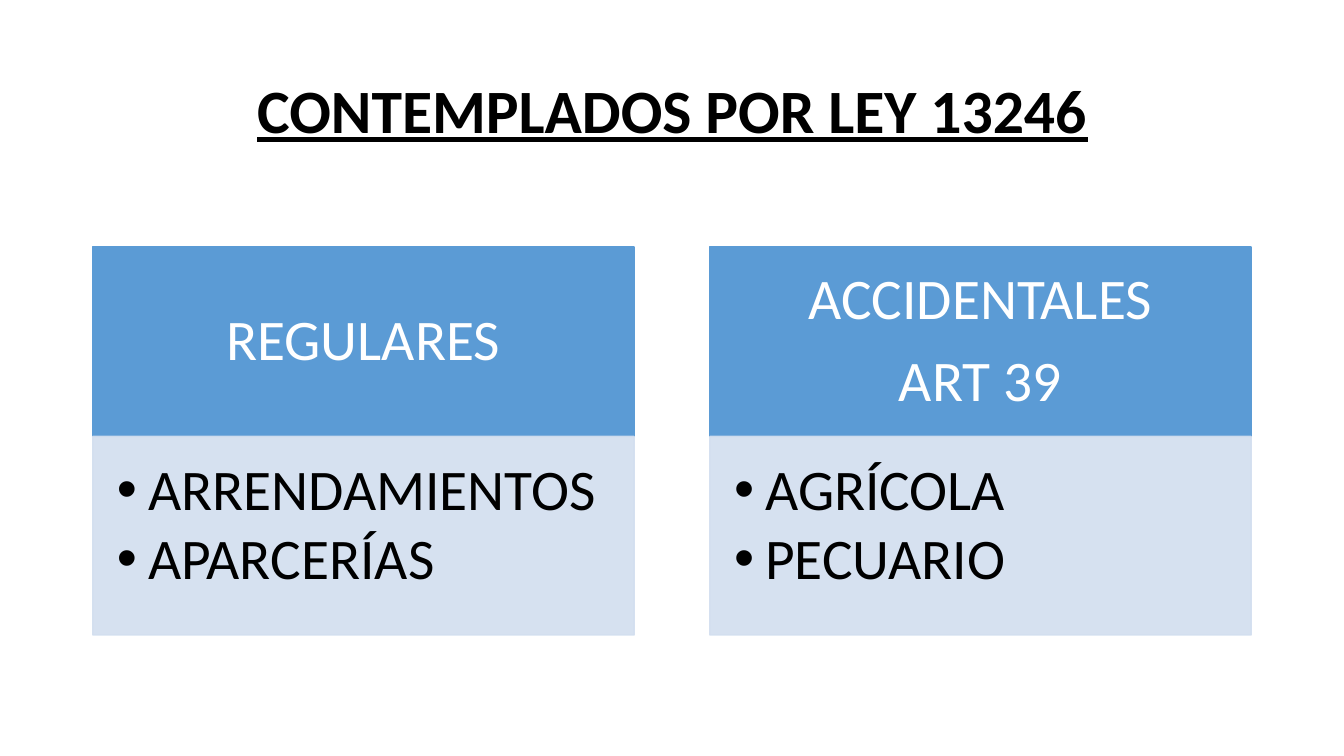
"""Builds the slide on the contracts covered by law 13246."""
import pptx
import pptx.dml.color
import pptx.enum.shapes
import pptx.enum.text
import pptx.oxml.ns
import pptx.util
from lxml import etree

PX = 9144
COLOURS = {"header": "5B9BD5", "body": "D2DEEF", "ink": "000000", "paper": "FFFFFF"}
ANCHOR = pptx.enum.text.MSO_ANCHOR
ALIGN = pptx.enum.text.PP_ALIGN


def apply(target, values):
    for attribute, value in values.items():
        setattr(target, attribute, value)


class Board:
    def __init__(self, slide, font):
        self.slide = slide
        self.font = font

    def colour(self, name):
        return pptx.dml.color.RGBColor.from_string(COLOURS[name])

    def element(self, parent, tag, **attributes):
        return etree.SubElement(parent, pptx.oxml.ns.qn(tag), attributes)

    def fill_text(self, frame, lines, ink, insets, anchor, font, paragraph_format, bullet=0):
        sides = ("margin_left", "margin_top", "margin_right", "margin_bottom")
        apply(frame, dict(zip(sides, (inset * PX for inset in insets))))
        apply(frame, {"word_wrap": True, "vertical_anchor": anchor})
        for index, line in enumerate(lines):
            paragraph = frame.paragraphs[0] if index == 0 else frame.add_paragraph()
            apply(paragraph, {"line_spacing": 0.9, **paragraph_format})
            run = paragraph.add_run()
            run.text = line
            apply(run.font, {"name": self.font, **font})
            run.font.color.rgb = self.colour(ink)
            if bullet:
                properties = paragraph._p.get_or_add_pPr()
                properties.set("marL", str(bullet * PX))
                properties.set("indent", str(-bullet * PX))
                self.element(properties, "a:buFont", typeface="Arial")
                self.element(properties, "a:buChar", char="•")

    def text(self, box, lines, **style):
        textbox = self.slide.shapes.add_textbox(*(length * PX for length in box))
        self.fill_text(textbox.text_frame, lines, **style)

    def panel(self, box, lines, fill, opacity, **style):
        panel = self.slide.shapes.add_shape(
            pptx.enum.shapes.MSO_SHAPE.RECTANGLE, *(length * PX for length in box))
        panel.shadow.inherit = False
        panel.fill.solid()
        panel.fill.fore_color.rgb = self.colour(fill)
        panel.line.color.rgb = self.colour(fill)
        panel.line.width = pptx.util.Pt(1)
        if opacity < 100:
            for paint in panel._element.spPr.iter(pptx.oxml.ns.qn("a:srgbClr")):
                self.element(paint, "a:alpha", val=str(opacity * 1000))
        self.fill_text(panel.text_frame, lines, **style)


def main():
    presentation = pptx.Presentation()
    apply(presentation, {"slide_width": 1333 * PX, "slide_height": 750 * PX})
    board = Board(presentation.slides.add_slide(presentation.slide_layouts[6]), "Calibri")

    board.text(
        (92, 40, 1150, 145), ["CONTEMPLADOS POR LEY 13246"], ink="ink",
        insets=(10, 5, 10, 5), anchor=ANCHOR.MIDDLE,
        font={"size": pptx.util.Pt(44), "bold": True, "underline": True},
        paragraph_format={"alignment": ALIGN.CENTER})

    contracts = [
        (["REGULARES"], ["ARRENDAMIENTOS", "APARCERÍAS"]),
        (["ACCIDENTALES", "ART 39"], ["AGRÍCOLA", "PECUARIO"]),
    ]
    left, top, width, step = 92, 245, 537, 612
    header_height, body_height = 188, 197
    panel_font = {"size": pptx.util.Pt(41)}
    for column, (heading, kinds) in enumerate(contracts):
        x = left + column * step
        board.panel(
            (x, top, width, header_height), heading, "header", 100, ink="paper",
            insets=(32, 18, 32, 18), anchor=ANCHOR.MIDDLE, font=panel_font,
            paragraph_format={"alignment": ALIGN.CENTER, "space_after": pptx.util.Pt(14)})
        board.panel(
            (x, top + header_height, width, body_height), kinds, "body", 90, ink="ink",
            insets=(24, 24, 32, 36), anchor=ANCHOR.TOP, font=panel_font, bullet=31,
            paragraph_format={"alignment": ALIGN.LEFT, "level": 1,
                              "space_after": pptx.util.Pt(5)})

    presentation.save("out.pptx")


if __name__ == "__main__":
    main()
